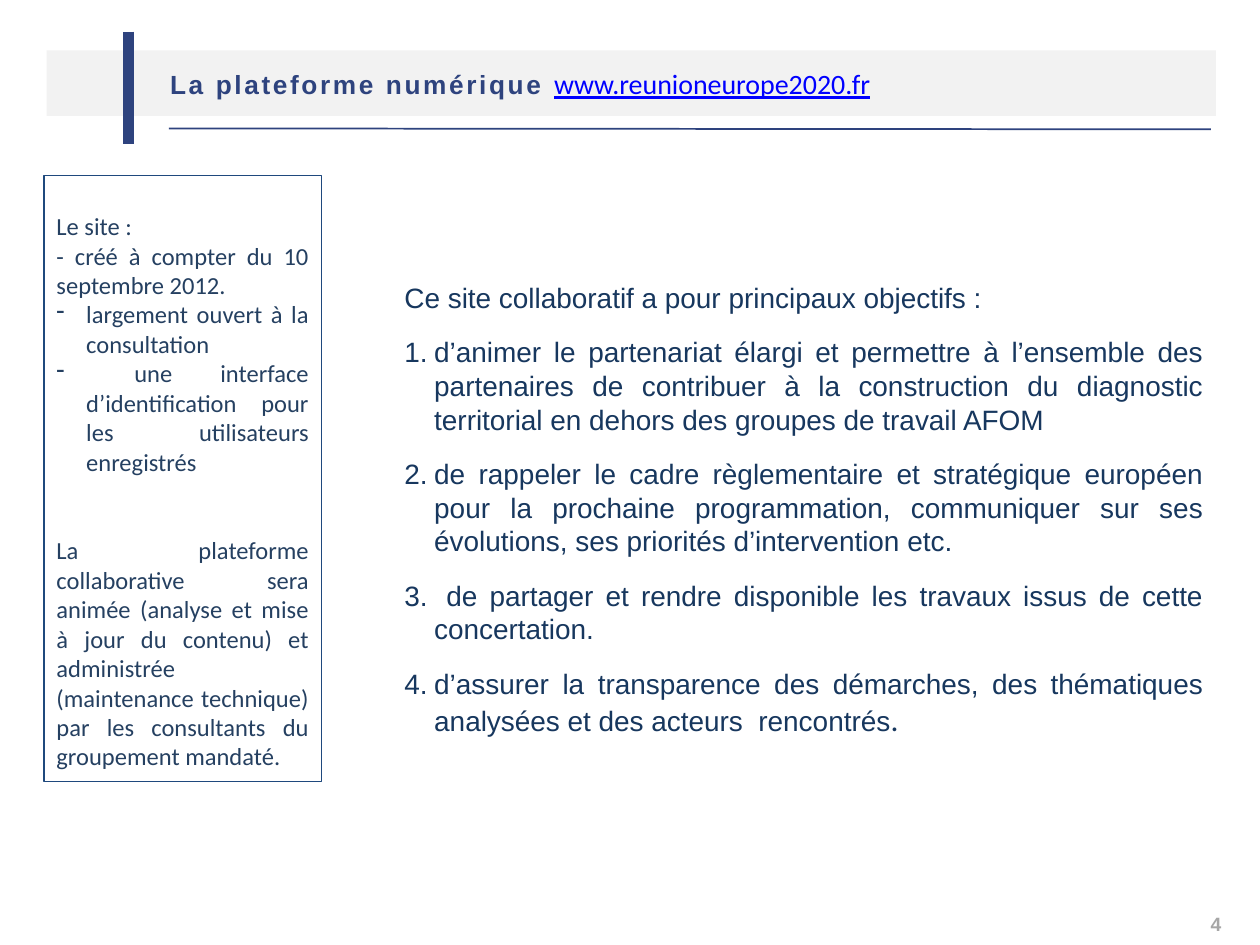
from lxml.etree import SubElement
from pptx import Presentation
from pptx.dml.color import RGBColor
from pptx.enum.shapes import MSO_CONNECTOR
from pptx.enum.text import MSO_ANCHOR, MSO_AUTO_SIZE, PP_ALIGN
from pptx.oxml.ns import qn
from pptx.util import Pt

NAVY = RGBColor(0x2E, 0x43, 0x7E)
BAND = RGBColor(0xF2, 0xF2, 0xF2)
LINK = RGBColor(0x00, 0x00, 0xFF)
BODY = RGBColor(0x17, 0x37, 0x5E)
SIDE = RGBColor(0x25, 0x40, 0x61)
FRAME = RGBColor(0x1F, 0x49, 0x7D)
GREY = RGBColor(0xA6, 0xA6, 0xA6)

# Content
TITLE = "La plateforme numérique "
ADDRESS = "www.reunioneurope2020.fr"
PAGE_NUMBER = "4"
INTRO = "Ce site collaboratif a pour principaux objectifs :"
OBJECTIVES = [
    "d’animer le partenariat élargi et permettre à l’ensemble des partenaires de contribuer "
    "à la construction du diagnostic territorial en dehors des groupes de travail AFOM",
    "de rappeler le cadre règlementaire et stratégique européen pour la prochaine "
    "programmation, communiquer sur ses évolutions, ses priorités d’intervention etc.",
    " de partager et rendre disponible les travaux issus de cette concertation.",
    "d’assurer la transparence des démarches, des thématiques analysées et des acteurs  rencontrés",
]
# Side box: text, bulleted, space before
SITE_NOTES = [
    ("Le site :", False, 0),
    ("- créé à compter du 10 septembre 2012.", False, 0),
    ("largement ouvert à la consultation", True, 0),
    (" une interface d’identification pour les utilisateurs enregistrés", True, 0),
    ("La plateforme collaborative sera animée (analyse et mise à jour du contenu) et "
     "administrée (maintenance technique) par les consultants du groupement mandaté.",
     False, 34),
]
# Rules: start x, start y, end x, end y, width
RULES = [(73.4, 18, 73.4, 82.1, 6), (96.5, 73.4, 691.9, 73.9, 1)]
HANGING = 17


def place(shape, left, top, width, height):
    shape.left, shape.top, shape.width, shape.height = map(Pt, (left, top, width, height))


def set_frame(shape, left=7.2, top=3.6, anchor=MSO_ANCHOR.TOP):
    frame = shape.text_frame
    frame.word_wrap = True
    frame.auto_size = MSO_AUTO_SIZE.NONE
    frame.vertical_anchor = anchor
    frame.margin_left, frame.margin_top = Pt(left), Pt(top)
    frame.margin_right, frame.margin_bottom = Pt(7.2), Pt(3.6)
    return frame


def set_font(font, name, size, color, bold=False):
    font.name, font.size, font.bold = name, Pt(size), bold
    font.color.rgb = color


def set_bullet(para, tag, hanging=0, **attributes):
    properties = para._p.get_or_add_pPr()
    properties.set("marL", str(Pt(hanging)))
    properties.set("indent", str(-Pt(hanging)))
    SubElement(properties, qn(tag), attributes)


def add_para(frame, text, before=0):
    para = frame.paragraphs[0] if not frame.text else frame.add_paragraph()
    para.space_before = Pt(before)
    span = para.add_run()
    span.text = text
    return para


deck = Presentation()
deck.slide_width, deck.slide_height = Pt(720), Pt(540)
page = deck.slides.add_slide(deck.slide_layouts[1])

# Title band
title = page.shapes.title
place(title, 26.6, 28.8, 668.2, 37.4)
title.fill.solid()
title.fill.fore_color.rgb = BAND
para = add_para(set_frame(title, left=70.6, anchor=MSO_ANCHOR.MIDDLE), TITLE)
para.alignment = PP_ALIGN.LEFT
heading = para.runs[0]
set_font(heading.font, "Arial", 15, NAVY, True)
heading.font._element.set("spc", "150")
address = para.add_run()
address.text = ADDRESS
set_font(address.font, "Calibri", 16, LINK)
address.font.underline = True

# Rules beside and below the title
for start_x, start_y, end_x, end_y, width in RULES:
    rule = page.shapes.add_connector(
        MSO_CONNECTOR.STRAIGHT, Pt(start_x), Pt(start_y), Pt(end_x), Pt(end_y))
    rule.line.color.rgb = NAVY
    rule.line.width = Pt(width)
    SubElement(rule._element.spPr, qn("a:effectLst"))

# Objectives
objectives = page.placeholders[1]
place(objectives, 223.9, 138.2, 470.9, 288.7)
frame = set_frame(objectives, top=22)
para = add_para(frame, INTRO)
set_bullet(para, "a:buNone")
set_font(para.font, "Arial", 16, BODY)
for text in OBJECTIVES:
    para = add_para(frame, text, before=12)
    para.alignment = PP_ALIGN.JUSTIFY
    set_bullet(para, "a:buAutoNum", HANGING, type="arabicPeriod")
    set_font(para.font, "Arial", 16, BODY)
stop = para.add_run()
stop.text = "."
set_font(stop.font, "Calibri", 18, BODY)

# Side box about the site
side_box = page.shapes.add_textbox(Pt(25.2), Pt(100.1), Pt(158.4), Pt(346.3))
side_box.line.color.rgb = FRAME
side_box.line.width = Pt(0.75)
frame = set_frame(side_box, top=20.6)
for text, bulleted, before in SITE_NOTES:
    para = add_para(frame, text, before)
    para.alignment = PP_ALIGN.JUSTIFY
    if bulleted:
        set_bullet(para, "a:buChar", HANGING, char="-")
    set_font(para.font, "Calibri", 14, SIDE)

# Page number
number_box = page.shapes.add_textbox(Pt(684.7), Pt(517.7), Pt(25.9), Pt(22.3))
para = add_para(set_frame(number_box), PAGE_NUMBER)
set_font(para.font, "Arial", 11, GREY, True)

deck.save("out.pptx")
